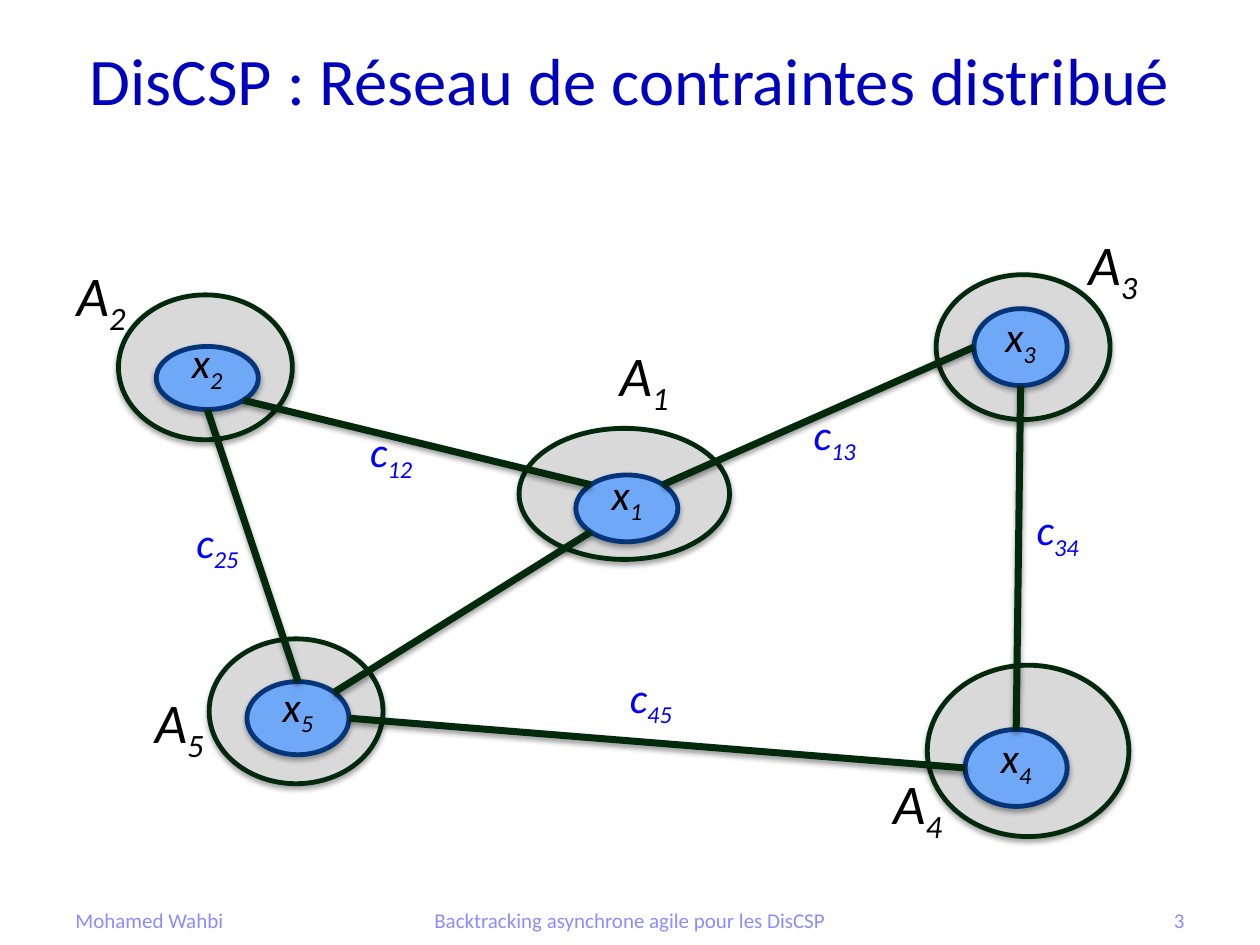
"""Build the slide showing a distributed constraint network of five agents."""
from math import cos, pi, sin

from lxml import etree
from pptx import Presentation
from pptx.dml.color import RGBColor
from pptx.enum import shapes, text
from pptx.oxml import ns
from pptx.util import Inches, Pt

FONT = "Calibri"
TITLE_BLUE = RGBColor(0x00, 0x00, 0xBF)
LABEL_BLUE = RGBColor(0x00, 0x00, 0xFF)
FOOTER_BLUE = RGBColor(0x8C, 0x8C, 0xFF)
BLACK = RGBColor(0x00, 0x00, 0x00)
AGENT_FILL = RGBColor(0xD9, 0xD9, 0xD9)
DARK_GREEN = RGBColor(0x03, 0x29, 0x0D)
VARIABLE_FILL = RGBColor(0x6F, 0xA8, 0xF7)
VARIABLE_LINE = RGBColor(0x04, 0x35, 0x79)

# Number: agent ellipse, variable ellipse, position of the agent's name
AGENTS = {
    "3": ((7.43, 2.18, 1.38, 1.15), (7.73, 2.45, 0.74, 0.61), (8.54, 1.77)),
    "5": ((1.66, 5.07, 1.38, 1.15), (1.96, 5.41, 0.81, 0.58), (1.13, 5.41)),
    "1": ((4.12, 3.4, 1.67, 1.04), (4.57, 3.77, 0.81, 0.53), (4.82, 2.65)),
    "4": ((7.36, 5.28, 1.6, 1.36), (7.66, 5.79, 0.81, 0.61), (6.99, 6.05)),
    "2": ((0.94, 2.34, 1.38, 1.15), (1.24, 2.75, 0.81, 0.5), (0.51, 2.02)),
}

# Ellipse sites run anticlockwise in eighths of a turn, from the top
TOP, TOP_LEFT, LEFT, BOTTOM_LEFT, BOTTOM, BOTTOM_RIGHT, RIGHT, TOP_RIGHT = range(8)
CONSTRAINTS = [
    ("2", BOTTOM, "5", TOP),
    ("2", BOTTOM_RIGHT, "1", TOP_LEFT),
    ("5", TOP_RIGHT, "1", BOTTOM_LEFT),
    ("1", TOP_RIGHT, "3", LEFT),
    ("4", TOP, "3", BOTTOM),
    ("5", RIGHT, "4", LEFT),
]
CONSTRAINT_LABELS = {
    "12": (2.84, 3.33),
    "25": (1.46, 4.05),
    "45": (4.9, 5.28),
    "13": (6.36, 3.19),
    "34": (8.13, 3.95),
}
FOOTERS = [
    ("Mohamed Wahbi", (0.5, 7.1, 2.33, 0.4), text.PP_ALIGN.LEFT),
    ("3", (7.17, 7.1, 2.33, 0.4), text.PP_ALIGN.RIGHT),
    ("Backtracking asynchrone agile pour les DisCSP", (2.73, 7.1, 4.54, 0.4),
     text.PP_ALIGN.CENTER),
]


def write_text(shape, words, subscript="", size=24, color=BLACK, italic=False,
               align=text.PP_ALIGN.LEFT, anchor=text.MSO_ANCHOR.TOP,
               wrap=True, spacing=None):
    """Write one paragraph with an optional subscript into a shape."""
    frame = shape.text_frame
    frame.word_wrap = wrap
    frame.vertical_anchor = anchor
    paragraph = frame.paragraphs[0]
    paragraph.alignment = align
    for part, baseline in ((words, None), (subscript, "-25000")):
        if not part:
            continue
        run = paragraph.add_run()
        run.text = part
        run.font.name = FONT
        run.font.size = Pt(size)
        run.font.italic = italic
        run.font.color.rgb = color
        properties = run.font._element
        if baseline:
            properties.set("baseline", baseline)
        if spacing is not None:
            properties.set("spc", str(int(spacing * 100)))


def add_shadow(shape, opacity, distance):
    """Give a shape or connector a soft shadow straight below it."""
    effects = etree.SubElement(shape._element.spPr, ns.qn("a:effectLst"))
    shadow = etree.SubElement(
        effects, ns.qn("a:outerShdw"), blurRad=str(Pt(3.1)),
        dist=str(Pt(distance)), dir="5400000", rotWithShape="0")
    color = etree.SubElement(shadow, ns.qn("a:srgbClr"), val="000000")
    etree.SubElement(color, ns.qn("a:alpha"), val=str(opacity * 1000))


def add_ellipse(slide, box, fill, line):
    """Add a filled, outlined ellipse with a shadow."""
    ellipse = slide.shapes.add_shape(shapes.MSO_SHAPE.OVAL, *map(Inches, box))
    ellipse.fill.solid()
    ellipse.fill.fore_color.rgb = fill
    ellipse.line.color.rgb = line
    ellipse.line.width = Pt(2.75)
    add_shadow(ellipse, 35, 1.8)
    return ellipse


def add_label(slide, words, subscript, position, size, color):
    """Add an italic name with a subscript."""
    width, height = (0.69, 0.64) if size > 24 else (0.63, 0.5)
    box = slide.shapes.add_textbox(*map(Inches, (*position, width, height)))
    write_text(box, words, subscript, size=size, color=color, italic=True, wrap=False)
    box.text_frame.auto_size = text.MSO_AUTO_SIZE.SHAPE_TO_FIT_TEXT


def add_agent(slide, number, agent_box, variable_box, name_position):
    """Add an agent with its name and return its variable's ellipse."""
    add_ellipse(slide, agent_box, AGENT_FILL, DARK_GREEN)
    variable = add_ellipse(slide, variable_box, VARIABLE_FILL, VARIABLE_LINE)
    write_text(variable, "x", number, italic=True, spacing=-1.5,
               align=text.PP_ALIGN.CENTER, anchor=text.MSO_ANCHOR.BOTTOM)
    add_label(slide, "A", number, name_position, 32, BLACK)
    return variable


def site_point(ellipse, site):
    """Return the position of a connection site on an ellipse."""
    angle = site * pi / 4
    x = ellipse.left + ellipse.width / 2 * (1 - sin(angle))
    y = ellipse.top + ellipse.height / 2 * (1 - cos(angle))
    return int(x), int(y)


def add_constraint(slide, start, start_site, end, end_site):
    """Join two variables with a thick line glued to their sites."""
    connector = slide.shapes.add_connector(
        shapes.MSO_CONNECTOR.STRAIGHT,
        *site_point(start, start_site), *site_point(end, end_site))
    connector.line.color.rgb = DARK_GREEN
    connector.line.width = Pt(4)
    add_shadow(connector, 38, 1.6)
    joints = connector._element.find(".//" + ns.qn("p:cNvCxnSpPr"))
    for tag, shape, site in (("a:stCxn", start, start_site), ("a:endCxn", end, end_site)):
        etree.SubElement(joints, ns.qn(tag), id=str(shape.shape_id), idx=str(site))


def add_title(slide, words):
    """Place and fill the title placeholder."""
    title = slide.shapes.title
    title.left, title.top, title.width, title.height = map(Inches, (0.5, 0, 9, 1.25))
    write_text(title, words, size=38, color=TITLE_BLUE,
               align=text.PP_ALIGN.CENTER, anchor=text.MSO_ANCHOR.MIDDLE)
    title.text_frame.auto_size = text.MSO_AUTO_SIZE.NONE


def add_footer(slide, words, box, align):
    """Add one part of the footer."""
    footer = slide.shapes.add_textbox(*map(Inches, box))
    write_text(footer, words, size=12, color=FOOTER_BLUE, align=align,
               anchor=text.MSO_ANCHOR.MIDDLE)


def main():
    """Build and save the presentation."""
    presentation = Presentation()
    presentation.slide_width = Inches(10)
    presentation.slide_height = Inches(7.5)
    slide = presentation.slides.add_slide(presentation.slide_layouts[5])
    add_title(slide, "DisCSP : Réseau de contraintes distribué")
    variables = {number: add_agent(slide, number, *places)
                 for number, places in AGENTS.items()}
    for start, start_site, end, end_site in CONSTRAINTS:
        add_constraint(slide, variables[start], start_site, variables[end], end_site)
    for subscript, position in CONSTRAINT_LABELS.items():
        add_label(slide, "c", subscript, position, 24, LABEL_BLUE)
    for footer in FOOTERS:
        add_footer(slide, *footer)
    presentation.save("out.pptx")


if __name__ == "__main__":
    main()
